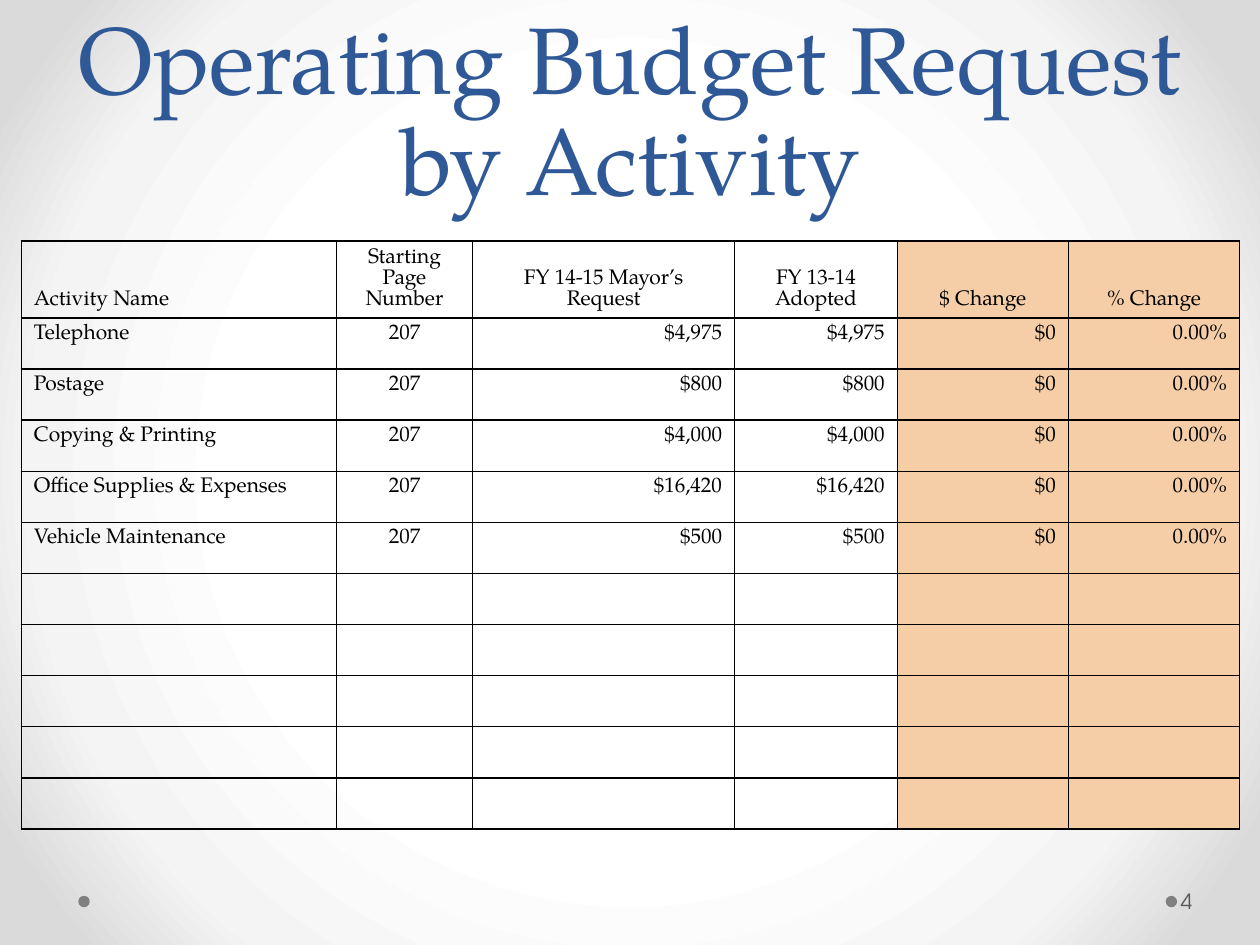
"""Build the operating budget request slide."""
from lxml import etree
from pptx import Presentation
from pptx.dml.color import RGBColor
from pptx.enum import shapes, text
from pptx.oxml import parse_xml
from pptx.oxml.ns import nsdecls, qn
from pptx.util import Cm, Pt

TITLE = "Operating Budget Request by Activity"
HEAD = ["Activity Name", "Starting Page Number", "FY 14-15 Mayor’s Request",
        "FY 13-14 Adopted", "$ Change", "% Change"]
ITEMS = [("Telephone", "$4,975"), ("Postage", "$800"),
         ("Copying & Printing", "$4,000"),
         ("Office Supplies & Expenses", "$16,420"),
         ("Vehicle Maintenance", "$500")]
PAGE = "207"
BLANKS = 5
WIDTHS = [6.35, 2.75, 5.28, 3.28, 3.45, 3.45]
HEAD_H, ROW_H = 1.55, 1.03
STOPS = [(50, "FFFFFF"), (76, "F4F4F4"), (92, "DADADA")]
SERIF, SANS = "TeX Gyre Pagella", "TeX Gyre Adventor"
BLUE = RGBColor(0x2F, 0x58, 0x97)
BLACK = RGBColor(0, 0, 0)
PEACH = RGBColor(0xF5, 0xCE, 0xA7)
GRAY = RGBColor(0x80, 0x80, 0x80)
DARK = RGBColor(0x59, 0x59, 0x59)
LEFT, MID, RIGHT = (text.PP_ALIGN.LEFT, text.PP_ALIGN.CENTER,
                    text.PP_ALIGN.RIGHT)
ALIGNS = [LEFT, MID, RIGHT, RIGHT, RIGHT, RIGHT]


def style(para, size, face, color, align=LEFT):
    para.alignment = align
    para.font.size = Pt(size)
    para.font.name = face
    para.font.color.rgb = color


def add_text(slide, box, words, anchor, *look):
    frame = slide.shapes.add_textbox(*map(Cm, box)).text_frame
    frame.word_wrap = True
    frame.vertical_anchor = anchor
    para = frame.paragraphs[0]
    para.text = words
    style(para, *look)
    return frame


def paint_back(slide):
    stops = "".join(f'<a:gs pos="{pos * 1000}"><a:srgbClr val="{hue}"/></a:gs>'
                    for pos, hue in STOPS)
    slide.background.fill.solid()
    props = slide.background.fill._xPr
    props.replace(props[0], parse_xml(
        f'<a:gradFill {nsdecls("a")} rotWithShape="1"><a:gsLst>{stops}</a:gsLst>'
        '<a:path path="circle"><a:fillToRect l="50000" t="50000" r="50000" '
        'b="50000"/></a:path></a:gradFill>'))


def add_border(cell):
    props = cell._tc.get_or_add_tcPr()
    for side in "LRTB":
        line = etree.SubElement(props, qn(f"a:ln{side}"), w=str(Pt(1)))
        fill = etree.SubElement(line, qn("a:solidFill"))
        etree.SubElement(fill, qn("a:srgbClr"), val=str(BLACK))


def fill_cell(cell, words, row, col):
    add_border(cell)
    if col >= 4:
        cell.fill.solid()
        cell.fill.fore_color.rgb = PEACH
    else:
        cell.fill.background()
    para = cell.text_frame.paragraphs[0]
    para.text = words
    align = ALIGNS[col]
    if row == 0:
        cell.vertical_anchor = text.MSO_ANCHOR.BOTTOM
        para.line_spacing = Pt(12)
        align = MID if col else LEFT
    style(para, 12, SERIF, BLACK, align)


def add_budget(slide):
    rows = [HEAD] + [[name, PAGE, cost, cost, "$0", "0.00%"]
                     for name, cost in ITEMS]
    rows += [[""] * len(HEAD)] * BLANKS
    high = HEAD_H + ROW_H * (len(rows) - 1)
    table = slide.shapes.add_table(
        len(rows), len(HEAD), Cm(0.43), Cm(4.86),
        Cm(sum(WIDTHS)), Cm(high)).table
    table.first_row = table.horz_banding = False
    for col, width in enumerate(WIDTHS):
        table.columns[col].width = Cm(width)
    for row, words in enumerate(rows):
        table.rows[row].height = Cm(ROW_H if row else HEAD_H)
        for col, word in enumerate(words):
            fill_cell(table.cell(row, col), word, row, col)


def main():
    deck = Presentation()
    deck.slide_width, deck.slide_height = Cm(25.4), Cm(19.05)
    slide = deck.slides.add_slide(deck.slide_layouts[6])
    paint_back(slide)
    for left in (23.5, 1.58):
        dot = slide.shapes.add_shape(shapes.MSO_SHAPE.OVAL, Cm(left),
                                     Cm(18.06), Cm(0.23), Cm(0.23))
        dot.shadow.inherit = False
        dot.fill.solid()
        dot.fill.fore_color.rgb = GRAY
        dot.line.fill.background()
    title = add_text(slide, (1.27, 0, 22.86, 4.45), TITLE,
                     text.MSO_ANCHOR.BOTTOM, 54, SERIF, BLUE, MID)
    title.paragraphs[0].line_spacing = Pt(58)
    add_budget(slide)
    number = add_text(slide, (23.72, 17.65, 1.55, 1.02), "4",
                      text.MSO_ANCHOR.MIDDLE, 12, SANS, DARK)
    number.margin_left, number.margin_right = Cm(0.08), Cm(0.13)
    deck.save("out.pptx")


if __name__ == "__main__":
    main()
